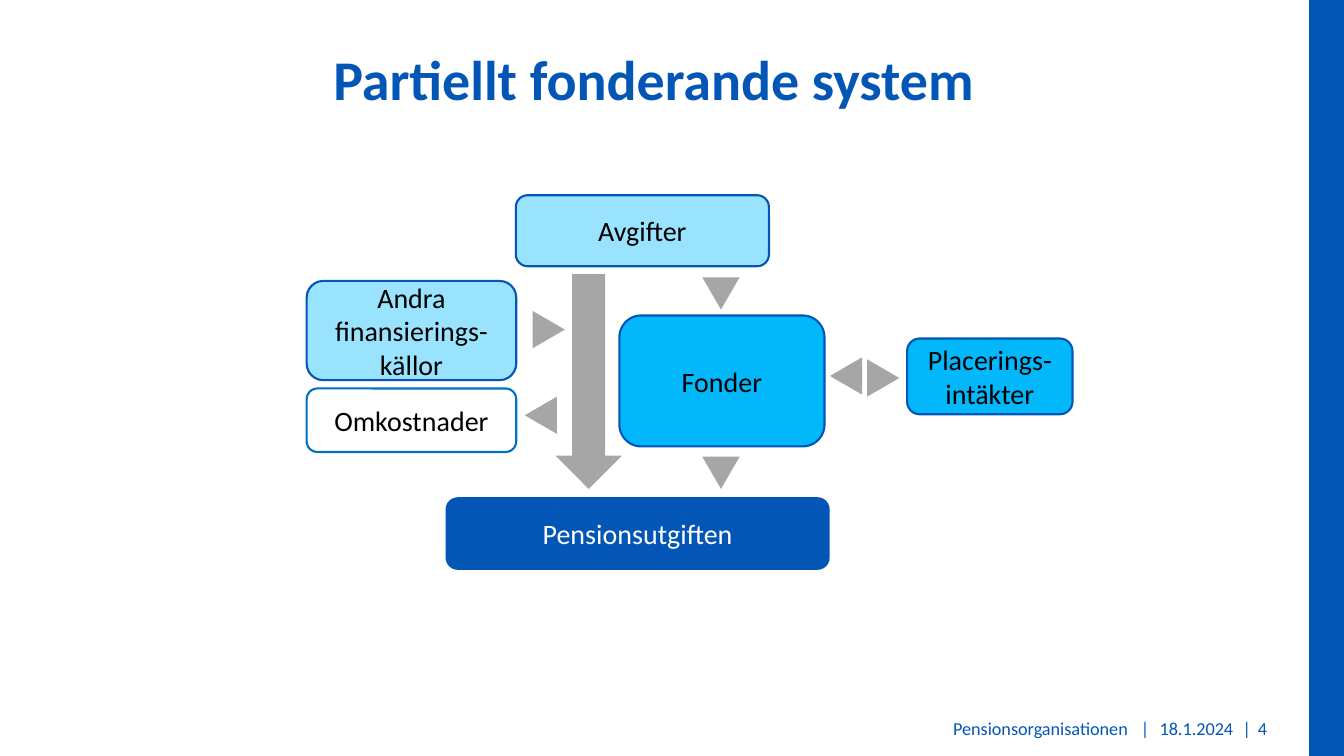
"""Builds the slide on the partially funded pension system."""
from pptx import Presentation
from pptx.dml.color import RGBColor
from pptx.enum.shapes import MSO_SHAPE
from pptx.enum.text import MSO_ANCHOR, PP_ALIGN
from pptx.util import Cm, Pt

COLORS = {"blue": "0356B5", "edge": "0070C0", "pale": "99E3FE", "bright": "02B7FA",
          "gray": "A6A6A6", "white": "FFFFFF", "black": "000000"}
FONT = "Calibri"
TITLE = "Partiellt fonderande system"

BOXES = [
    ("Avgifter", (13.0, 4.92, 6.38, 1.79), "pale", "blue", "black"),
    ("Andra finansierings-källor", (7.73, 7.08, 5.28, 2.5), "pale", "blue", "black"),
    ("Omkostnader", (7.73, 9.79, 5.28, 1.6), "white", "edge", "black"),
    ("Fonder", (15.61, 7.95, 5.17, 3.3), "bright", "blue", "black"),
    ("Placerings-intäkter", (22.86, 8.53, 4.17, 1.91), "bright", "blue", "black"),
    ("Pensionsutgiften", (11.23, 12.53, 9.68, 1.83), "blue", None, "white"),
]
FLOW_ARROW = (14.0, 6.91, 1.67, 5.41)
TRIANGLE = (0.94, 0.81)
TRIANGLES = [
    (17.7, 6.99, 0), (17.7, 11.51, 0),
    (13.36, 7.9, 270), (13.16, 10.06, 90),
    (21.79, 9.12, 270), (20.85, 9.07, 90),
]
FOOTER_TOP, FOOTER_HEIGHT = 17.91, 0.89
FOOTER = [
    ("Pensionsorganisationen", 18.42, 10.0, PP_ALIGN.RIGHT),
    ("|", 28.56, 0.6, PP_ALIGN.CENTER),
    ("18.1.2024", 28.93, 2.44, PP_ALIGN.CENTER),
    ("|", 31.12, 0.6, PP_ALIGN.CENTER),
    ("4", 31.7, 0.8, PP_ALIGN.LEFT),
]


def rgb(name):
    return RGBColor.from_string(COLORS[name])


def write(sp, text, size, color, align=PP_ALIGN.CENTER, anchor=MSO_ANCHOR.MIDDLE, bold=False):
    tf = sp.text_frame
    tf.word_wrap = True
    tf.vertical_anchor = anchor
    p = tf.paragraphs[0]
    p.text = text
    p.alignment = align
    p.font.name, p.font.size, p.font.bold = FONT, Pt(size), bold
    p.font.color.rgb = rgb(color)
    return tf


def add_shape(slide, kind, frame, fill, line=None):
    sp = slide.shapes.add_shape(kind, *map(Cm, frame))
    sp.shadow.inherit = False
    sp.fill.solid()
    sp.fill.fore_color.rgb = rgb(fill)
    if line:
        sp.line.color.rgb = rgb(line)
        sp.line.width = Pt(1.5)
    else:
        sp.line.fill.background()
    return sp


def main():
    prs = Presentation()
    prs.slide_width, prs.slide_height = Cm(33.87), Cm(19.05)
    slide = prs.slides.add_slide(prs.slide_layouts[5])

    title = slide.shapes.title
    title.left, title.top, title.width, title.height = map(Cm, (0, 1.0, 32.94, 2.34))
    write(title, TITLE, 40, "blue", anchor=MSO_ANCHOR.TOP, bold=True)

    add_shape(slide, MSO_SHAPE.RECTANGLE, (32.99, 0, 0.88, 19.05), "blue")

    for text, left, width, align in FOOTER:
        frame = (left, FOOTER_TOP, width, FOOTER_HEIGHT)
        tf = write(slide.shapes.add_textbox(*map(Cm, frame)), text, 13, "blue", align)
        tf.margin_left = tf.margin_right = 0

    for text, frame, fill, line, color in BOXES:
        write(add_shape(slide, MSO_SHAPE.ROUNDED_RECTANGLE, frame, fill, line), text, 20, color)

    add_shape(slide, MSO_SHAPE.DOWN_ARROW, FLOW_ARROW, "gray")
    for left, top, rotation in TRIANGLES:
        sp = add_shape(slide, MSO_SHAPE.FLOWCHART_MERGE, (left, top, *TRIANGLE), "gray")
        sp.rotation = rotation

    prs.save("out.pptx")


if __name__ == "__main__":
    main()
